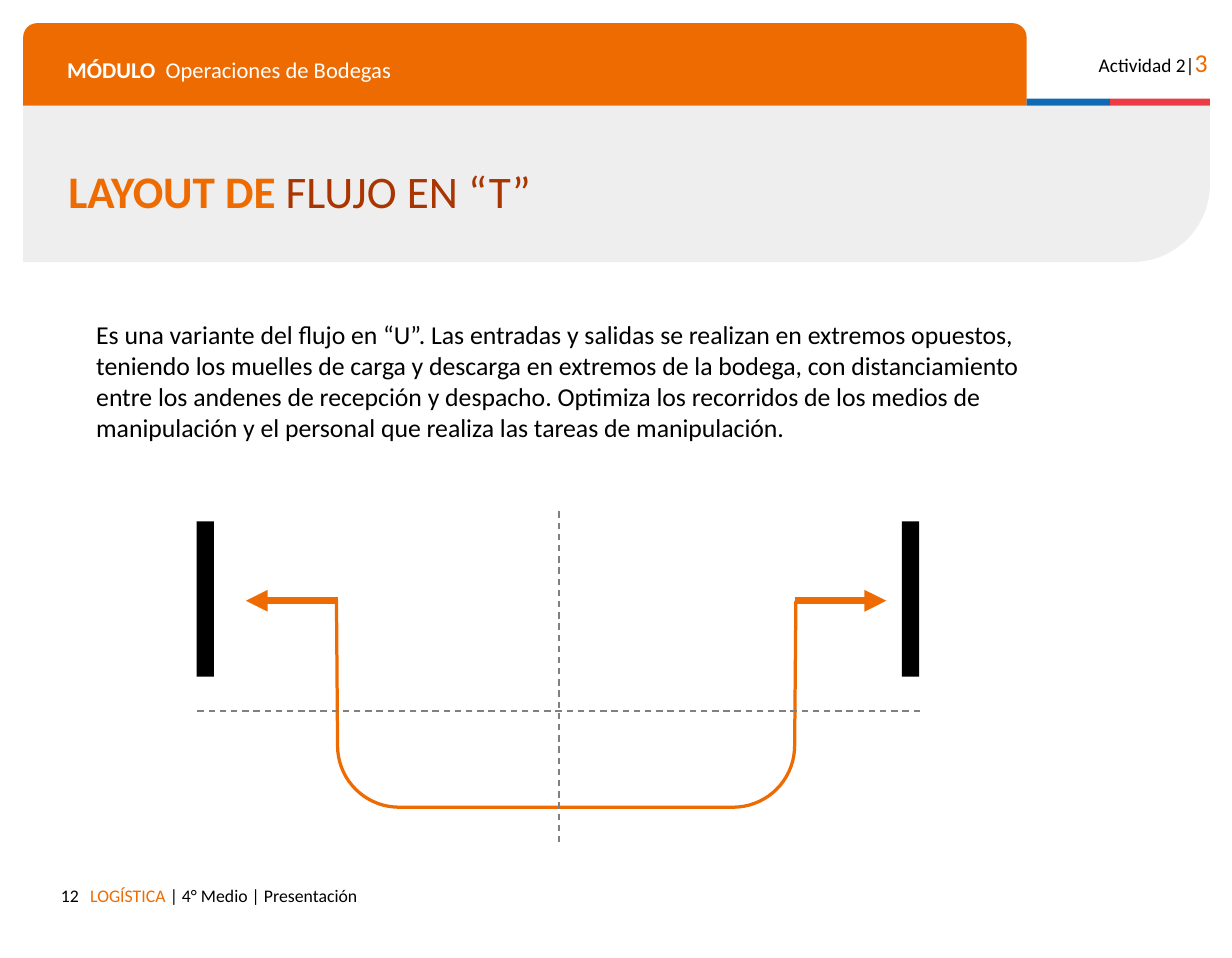
"""Builds the slide on the T-shaped warehouse flow layout."""
from math import cos, radians, sin

from lxml import etree
from pptx import Presentation
from pptx import util as u
from pptx.dml.color import RGBColor
from pptx.enum import dml, shapes, text
from pptx.oxml import ns

ORANGE, BLACK, WHITE, GREY = "ED6B00", "000000", "FFFFFF", "808080"

prs = Presentation()
prs.slide_width, prs.slide_height = u.Inches(10.62), u.Inches(8.26)
col, row = prs.slide_width / 100, prs.slide_height / 100
s = prs.slides.add_slide(prs.slide_layouts[1])


def paint(fmt, color):
    fmt.solid()
    fmt.fore_color.rgb = RGBColor.from_string(color)


def corner(x, y, start):
    angles = [radians(start + 5 * i) for i in range(19)]
    return [(x + rx * cos(a), y + ry * sin(a)) for a in angles]


rx, ry = 6.31, 8.11
band = [(1.88, 27.36), (1.88, 11.02), (98.21, 11.02)]
band += corner(98.21 - rx, 27.36 - ry, 0)
rx, ry = 4.99, 6.42
flow = [(64.6, 62.71)] + corner(64.5 - rx, 84.26 - ry, 0)
flow += corner(27.4 + rx, 84.26 - ry, 90) + [(27.31, 62.71)]

outlines = []
for points, closed in ((band, True), (flow, False)):
    pts = [(x * col, y * row) for x, y in points]
    builder = s.shapes.build_freeform(*pts[0])
    builder.add_line_segments(pts[1:], close=closed)
    sp = builder.convert_to_shape()
    sp.shadow.inherit = False
    outlines.append(sp)
title_band, flow_path = outlines
paint(title_band.fill, "EEEEEE")
title_band.line.fill.background()
flow_path.fill.background()
paint(flow_path.line.fill, ORANGE)
flow_path.line.width = u.Pt(2)

RECT = shapes.MSO_SHAPE.RECTANGLE
HEADER = shapes.MSO_SHAPE.ROUND_2_SAME_RECTANGLE
for kind, x, y, w, h, color in (
    (HEADER, 1.88, 2.42, 81.45, 8.6, ORANGE),
    (RECT, 83.33, 10.29, 6.78, 0.73, "0F69B4"),
    (RECT, 90.11, 10.29, 8.1, 0.73, "EB3C46"),
    (RECT, 15.96, 54.42, 1.41, 16.22, BLACK),
    (RECT, 73.21, 54.42, 1.41, 16.22, BLACK),
):
    sp = s.shapes.add_shape(kind, *map(int, (x * col, y * row, w * col, h * row)))
    sp.shadow.inherit = False
    paint(sp.fill, color)
    sp.line.fill.background()
    if kind == HEADER:
        sp.adjustments[0] = 0.17

for x1, y1, x2, y2, color, width, arrow in (
    (45.39, 53.39, 45.39, 87.89, GREY, 1, False),
    (74.67, 74.21, 15.82, 74.21, GREY, 1, False),
    (64.5, 62.71, 71.94, 62.71, ORANGE, 4.5, True),
    (27.4, 62.71, 19.96, 62.71, ORANGE, 4.5, True),
):
    ends = map(int, (x1 * col, y1 * row, x2 * col, y2 * row))
    line = s.shapes.add_connector(shapes.MSO_CONNECTOR.STRAIGHT, *ends)
    paint(line.line.fill, color)
    line.line.width = u.Pt(width)
    if arrow:
        ln = line.line._get_or_add_ln()
        etree.SubElement(ln, ns.qn("a:tailEnd"), type="triangle")
    else:
        line.line.dash_style = dml.MSO_LINE.DASH
    etree.SubElement(line._element.spPr, ns.qn("a:effectLst"))

title, body = s.shapes.title, s.placeholders[1]
activity, footer, module, number = [s.shapes.add_textbox(0, 0, 0, 0) for _ in range(4)]
LEFT, RIGHT = text.PP_ALIGN.LEFT, text.PP_ALIGN.RIGHT
description = (
    "Es una variante del flujo en “U”. Las entradas y salidas se realizan en extremos "
    "opuestos, teniendo los muelles de carga y descarga en extremos de la bodega, con "
    "distanciamiento entre los andenes de recepción y despacho. Optimiza los recorridos "
    "de los medios de manipulación y el personal que realiza las tareas de manipulación."
)
for sp, x, y, w, h, inset, align, runs in (
    (activity, 86.91, 3.63, 12.05, 5.21, 0.1, RIGHT,
     [("Actividad 2|", 12, BLACK, False), ("3", 16, ORANGE, False)]),
    (footer, 6.4, 91.16, 67.33, 4.24, 0.1, LEFT,
     [("LOGÍSTICA ", 11, ORANGE, False), ("| 4° Medio | Presentación", 11, BLACK, False)]),
    (module, 4.52, 4.6, 76.65, 4.96, 0.1, LEFT,
     [("MÓDULO", 14, WHITE, True), ("\tOperaciones de Bodegas", 14, WHITE, False)]),
    (number, 3.86, 91.16, 3.48, 4.24, 0.1, RIGHT, [("12", 11, BLACK, False)]),
    (title, 4.61, 16.83, 92.18, 7.14, 0.1, LEFT,
     [("LAYOUT DE ", 28, ORANGE, True), ("FLUJO EN “T”", 28, "A93501", False)]),
    (body, 7.34, 32.69, 77.02, 14.04, 0.05, LEFT, [(description, 16, BLACK, False)]),
):
    sp.left, sp.top, sp.width, sp.height = map(int, (x * col, y * row, w * col, h * row))
    s.shapes._spTree.append(sp._element)
    tf = sp.text_frame
    tf.word_wrap = True
    tf.auto_size = text.MSO_AUTO_SIZE.NONE
    tf.margin_left = tf.margin_right = tf.margin_top = tf.margin_bottom = u.Inches(inset)
    p = tf.paragraphs[0]
    p.alignment = align
    p.space_before = u.Pt(0)
    for words, size, color, bold in runs:
        r = p.add_run()
        r.text = words
        r.font.name, r.font.size, r.font.bold = "Calibri", u.Pt(size), bold
        paint(r.font.fill, color)

title.text_frame.vertical_anchor = text.MSO_ANCHOR.MIDDLE
title.text_frame.paragraphs[0].line_spacing = 0.8

pPr = body.text_frame.paragraphs[0]._p.get_or_add_pPr()
pPr.set("marL", "0")
pPr.set("indent", "0")
etree.SubElement(pPr, ns.qn("a:buNone"))

pPr = module.text_frame.paragraphs[0]._p.get_or_add_pPr()
tabs = etree.SubElement(pPr, ns.qn("a:tabLst"))
etree.SubElement(tabs, ns.qn("a:tab"), pos=str(int(8 * col)), algn="l")

prs.save("out.pptx")
